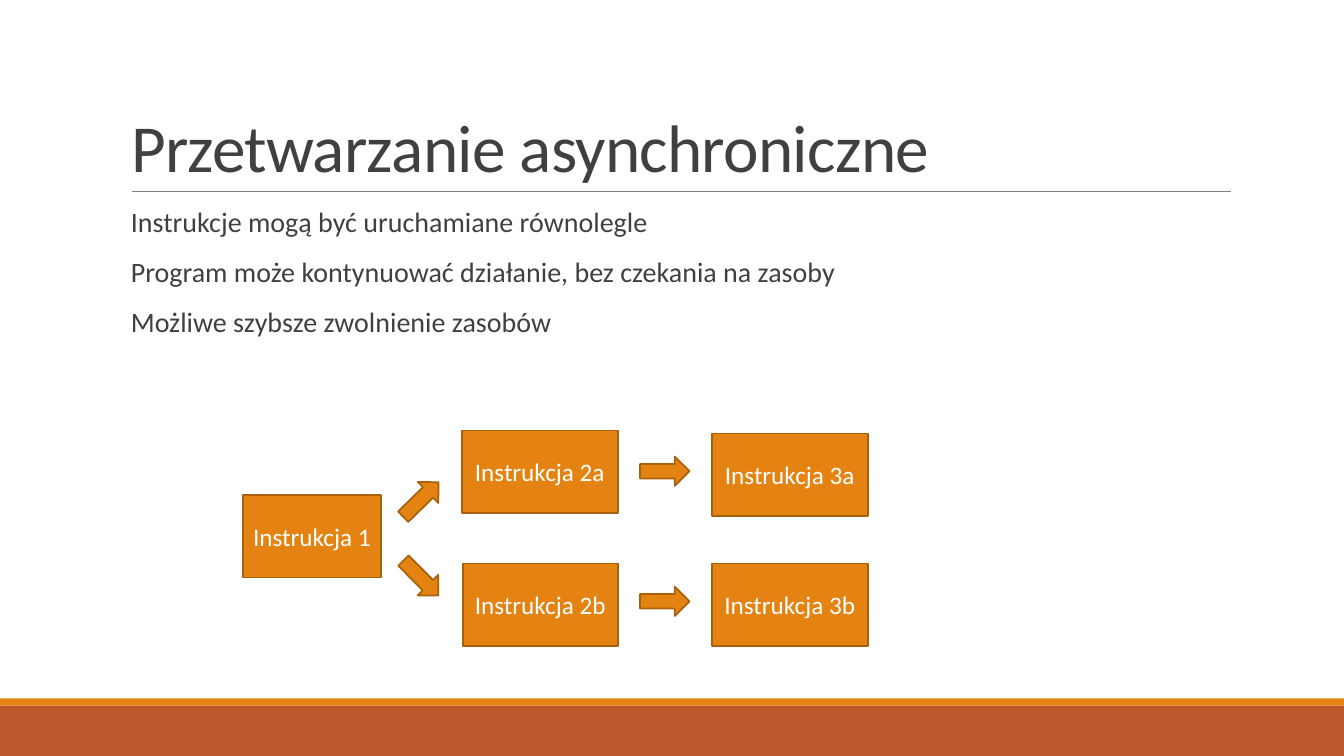
from dataclasses import dataclass

from lxml.etree import SubElement
from pptx import Presentation
from pptx.dml.color import RGBColor
from pptx.enum.shapes import MSO_CONNECTOR, MSO_SHAPE
from pptx.enum.text import MSO_ANCHOR, MSO_AUTO_SIZE, PP_ALIGN
from pptx.oxml.ns import qn
from pptx.util import Inches, Pt

CELL = Inches(0.1)
COLUMNS, ROWS = 133.33, 75


@dataclass(frozen=True)
class Theme:
    font: str = "Calibri"
    orange: str = "E48312"
    outline: str = "A9610D"
    rust: str = "BD582C"
    rule: str = "808080"
    ink: str = "404040"
    white: str = "FFFFFF"
    title_size: int = 48
    body_size: int = 20
    step_size: int = 18
    outline_width: float = 1.25
    rule_width: float = 0.5


@dataclass(frozen=True)
class Box:
    left: float
    top: float
    width: float
    height: float

    def inner(self, left, top, width, height):
        return Box(self.left + left, self.top + top, width, height)

    def lengths(self):
        return [round(value * CELL) for value in (self.left, self.top, self.width, self.height)]


THEME = Theme()


def color(value):
    return RGBColor.from_string(value)


def style_text(para, size, ink):
    para.font.name = THEME.font
    para.font.size = Pt(size)
    para.font.color.rgb = color(ink)


def add_filled(page, preset, box, fill, outline=None):
    shape = page.shapes.add_shape(preset, *box.lengths())
    shape.shadow.inherit = False
    shape.fill.solid()
    shape.fill.fore_color.rgb = color(fill)
    if outline:
        shape.line.color.rgb = color(outline)
        shape.line.width = Pt(THEME.outline_width)
    else:
        shape.line.fill.background()
    return shape


def add_footer(page, box):
    stripe = 0.7
    add_filled(page, MSO_SHAPE.RECTANGLE,
               box.inner(0, stripe, box.width, box.height - stripe), THEME.rust)
    add_filled(page, MSO_SHAPE.RECTANGLE, box.inner(0, 0, box.width, stripe), THEME.orange)


def add_title(page, box, text):
    title = page.shapes.title
    title.left, title.top, title.width, title.height = box.lengths()
    frame = title.text_frame
    frame.text = text
    frame.word_wrap = True
    frame.auto_size = MSO_AUTO_SIZE.NONE
    frame.vertical_anchor = MSO_ANCHOR.BOTTOM
    para = frame.paragraphs[0]
    para.alignment = PP_ALIGN.LEFT
    para.line_spacing = 0.85
    style_text(para, THEME.title_size, THEME.ink)
    para.runs[0]._r.get_or_add_rPr().set("spc", "-50")

    left, top, width, height = box.inner(1.1, box.height, 109, 0).lengths()
    rule = page.shapes.add_connector(MSO_CONNECTOR.STRAIGHT, left, top, left + width, top + height)
    rule.line.color.rgb = color(THEME.rule)
    rule.line.width = Pt(THEME.rule_width)
    SubElement(rule._element.spPr, qn("a:effectLst"))


def add_body(page, box, lines):
    frame = page.shapes.add_textbox(*box.lengths()).text_frame
    frame.word_wrap = True
    frame.margin_right = 0
    for index, line in enumerate(lines):
        para = frame.paragraphs[0] if index == 0 else frame.add_paragraph()
        para.text = line
        para.line_spacing = 0.9
        para.space_before = Pt(12)
        para.space_after = Pt(2)
        style_text(para, THEME.body_size, THEME.ink)


def add_step(page, box, text):
    shape = add_filled(page, MSO_SHAPE.RECTANGLE, box, THEME.orange, THEME.outline)
    frame = shape.text_frame
    frame.text = text
    frame.word_wrap = True
    frame.vertical_anchor = MSO_ANCHOR.MIDDLE
    para = frame.paragraphs[0]
    para.alignment = PP_ALIGN.CENTER
    style_text(para, THEME.step_size, THEME.white)


def add_flow(page, box):
    step_height = 8.2
    steps = [
        ("1", 0, 6.4, 13.7),
        ("2a", 21.7, 0, 15.5),
        ("2b", 21.8, 13.2, 15.4),
        ("3a", 46.5, 0.3, 15.5),
        ("3b", 46.5, 13.2, 15.5),
    ]
    for name, left, top, width in steps:
        add_step(page, box.inner(left, top, width, step_height), f"Instrukcja {name}")

    arrows = [(15.2, 5.4, 315.7), (15.2, 13.2, 45), (39.4, 2.6, 0), (39.4, 15.5, 0)]
    for left, top, angle in arrows:
        arrow = add_filled(page, MSO_SHAPE.RIGHT_ARROW, box.inner(left, top, 4.9, 2.9),
                           THEME.orange, THEME.outline)
        arrow.rotation = angle


def add_async_slide(deck):
    page = deck.slides.add_slide(deck.slide_layouts[5])
    page.background.fill.solid()
    page.background.fill.fore_color.rgb = color(THEME.white)
    add_footer(page, Box(0, 69.3, COLUMNS, 5.7))
    add_title(page, Box(12, 3.1, 110, 15.9), "Przetwarzanie asynchroniczne")
    add_body(page, Box(12, 20.2, 110, 44), [
        "Instrukcje mogą być uruchamiane równolegle",
        "Program może kontynuować działanie, bez czekania na zasoby",
        "Możliwe szybsze zwolnienie zasobów",
    ])
    add_flow(page, Box(24.1, 42.7, 62, 21.4))


def main():
    deck = Presentation()
    deck.slide_width = round(COLUMNS * CELL)
    deck.slide_height = ROWS * CELL
    add_async_slide(deck)
    deck.save("out.pptx")


if __name__ == "__main__":
    main()
